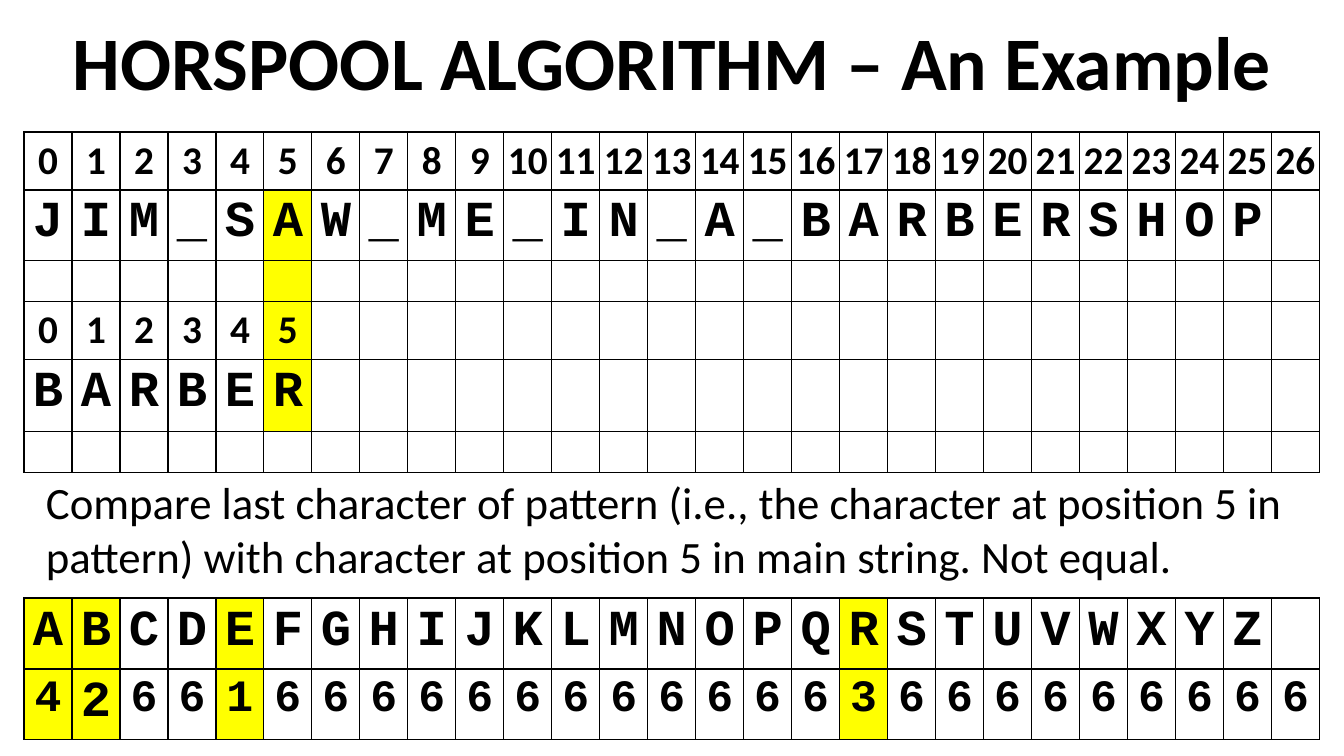
from pptx import Presentation
from pptx.dml.color import RGBColor
from pptx.enum.text import MSO_ANCHOR, PP_ALIGN
from pptx.oxml import parse_xml
from pptx.oxml.ns import nsdecls
from pptx.util import Pt

CENTER, MIDDLE = PP_ALIGN.CENTER, MSO_ANCHOR.MIDDLE
EMU_PER_PX = 914400 / 100.8
BLACK, YELLOW = "000000", "FFFF00"

COLUMN_COUNT, COLUMN_WIDTH = 27, 48
TEXT, PATTERN = "JIM_SAW_ME_IN_A_BARBERSHOP", "BARBER"
ALPHABET = "ABCDEFGHIJKLMNOPQRSTUVWXYZ"
LAST = len(PATTERN) - 1

INDEX = {"name": "Calibri", "size": Pt(28), "bold": True}
LETTER = {"name": "Courier New", "size": Pt(36), "bold": True}
SHIFT = LETTER | {"size": Pt(32)}
TITLE = {"name": "Calibri", "size": Pt(54), "bold": True}
BODY = {"name": "Calibri", "size": Pt(32), "bold": False}


def px(length):
    return round(length * EMU_PER_PX)


def color(hex_string):
    return RGBColor.from_string(hex_string)


def write(para, text, style, align=None):
    para.alignment = align
    span = para.add_run()
    span.text = text
    for name, value in style.items():
        setattr(span.font, name, value)
    span.font.color.rgb = color(BLACK)


def add_text(page, box, text, style, align=None, anchor=None, spacing=None):
    frame = page.shapes.add_textbox(*map(px, box)).text_frame
    frame.word_wrap = True
    frame.vertical_anchor = anchor
    para = frame.paragraphs[0]
    para.line_spacing = spacing
    write(para, text, style, align)


def add_borders(cell):
    properties = cell._tc.get_or_add_tcPr()
    for index, side in enumerate("LRTB"):
        properties.insert(index, parse_xml(
            f'<a:ln{side} {nsdecls("a")} w="12700"><a:solidFill>'
            f'<a:srgbClr val="{BLACK}"/></a:solidFill></a:ln{side}>'))


def add_grid(page, left, top, rows):
    """Draw rows given as (height, texts, style, highlighted columns)."""
    height = sum(row[0] for row in rows)
    box = (left, top, COLUMN_COUNT * COLUMN_WIDTH, height)
    table = page.shapes.add_table(len(rows), COLUMN_COUNT, *map(px, box)).table
    table.first_row = table.horz_banding = False
    for column in table.columns:
        column.width = px(COLUMN_WIDTH)
    for row, (row_height, texts, style, highlighted) in zip(table.rows, rows):
        row.height = px(row_height)
        for index, cell in enumerate(row.cells):
            cell.margin_left = cell.margin_right = 0
            if index in highlighted:
                cell.fill.solid()
                cell.fill.fore_color.rgb = color(YELLOW)
            else:
                cell.fill.background()
            add_borders(cell)
            if index < len(texts):
                cell_style = style
                if style is SHIFT and texts[index] == "2":
                    cell_style = LETTER
                write(cell.text_frame.paragraphs[0], texts[index], cell_style, CENTER)


def indexes(count):
    return [str(index) for index in range(count)]


def shift_row():
    """Distance from each letter's last place before the pattern's end."""
    shifts = {letter: LAST - place for place, letter in enumerate(PATTERN[:-1])}
    return [str(shifts.get(letter, len(PATTERN))) for letter in ALPHABET + " "]


def add_comparison(page, left, top):
    add_grid(page, left, top, [
        (58, indexes(COLUMN_COUNT), INDEX, []),
        (67, TEXT, LETTER, [LAST]),
        (41, "", INDEX, [LAST]),
        (58, indexes(len(PATTERN)), INDEX, [LAST]),
        (72, PATTERN, LETTER, [LAST]),
        (41, "", INDEX, []),
    ])


def add_shift_table(page, left, top):
    in_pattern = [ALPHABET.index(letter) for letter in set(PATTERN)]
    add_grid(page, left, top, [
        (71, ALPHABET, LETTER, in_pattern),
        (70, shift_row(), SHIFT, in_pattern),
    ])


def main():
    deck = Presentation()
    deck.slide_width, deck.slide_height = px(1344), px(756)
    page = deck.slides.add_slide(deck.slide_layouts[6])
    add_text(page, (0, 0, 1344, 132), "HORSPOOL ALGORITHM – An Example",
             TITLE, CENTER, MIDDLE, 0.9)
    add_comparison(page, 24, 132)
    add_text(page, (36, 470, 1271, 119),
             "Compare last character of pattern (i.e., the character at position 5 in "
             "pattern) with character at position 5 in main string. Not equal.", BODY)
    add_shift_table(page, 24, 598)
    deck.save("out.pptx")


if __name__ == "__main__":
    main()
